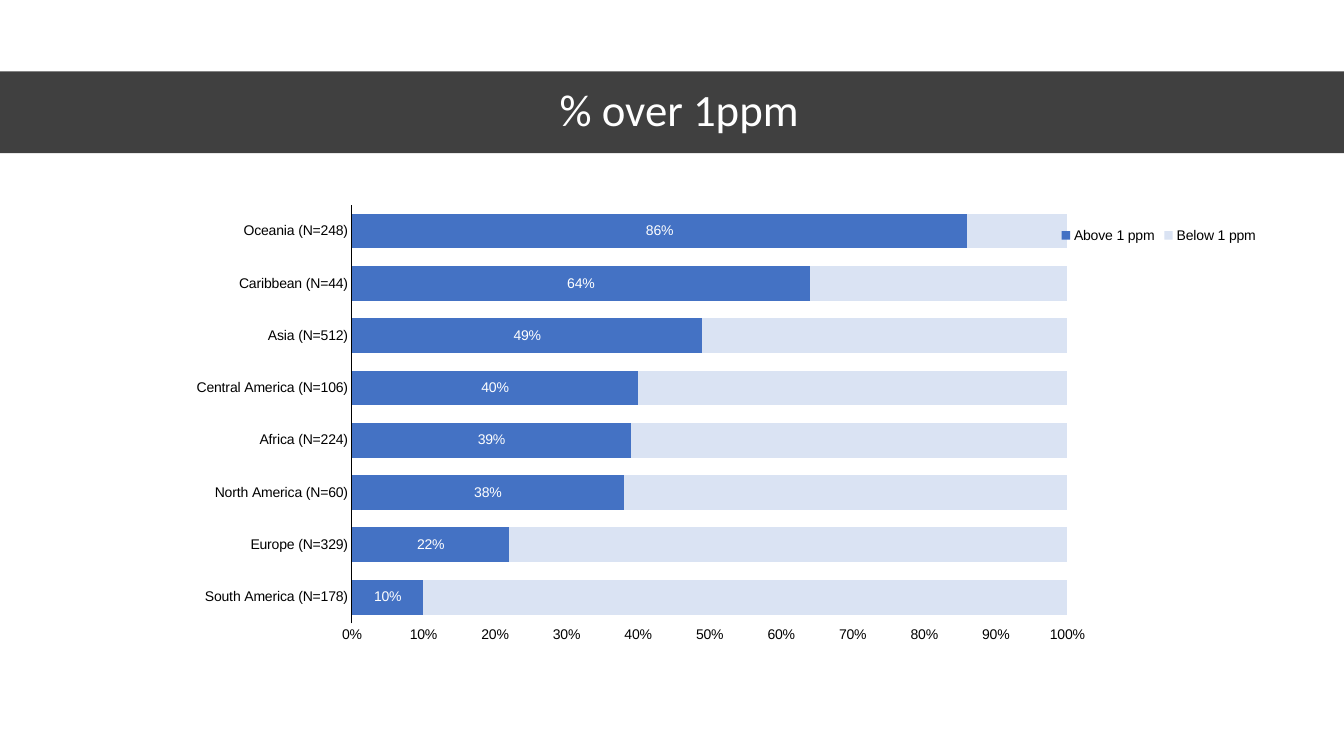
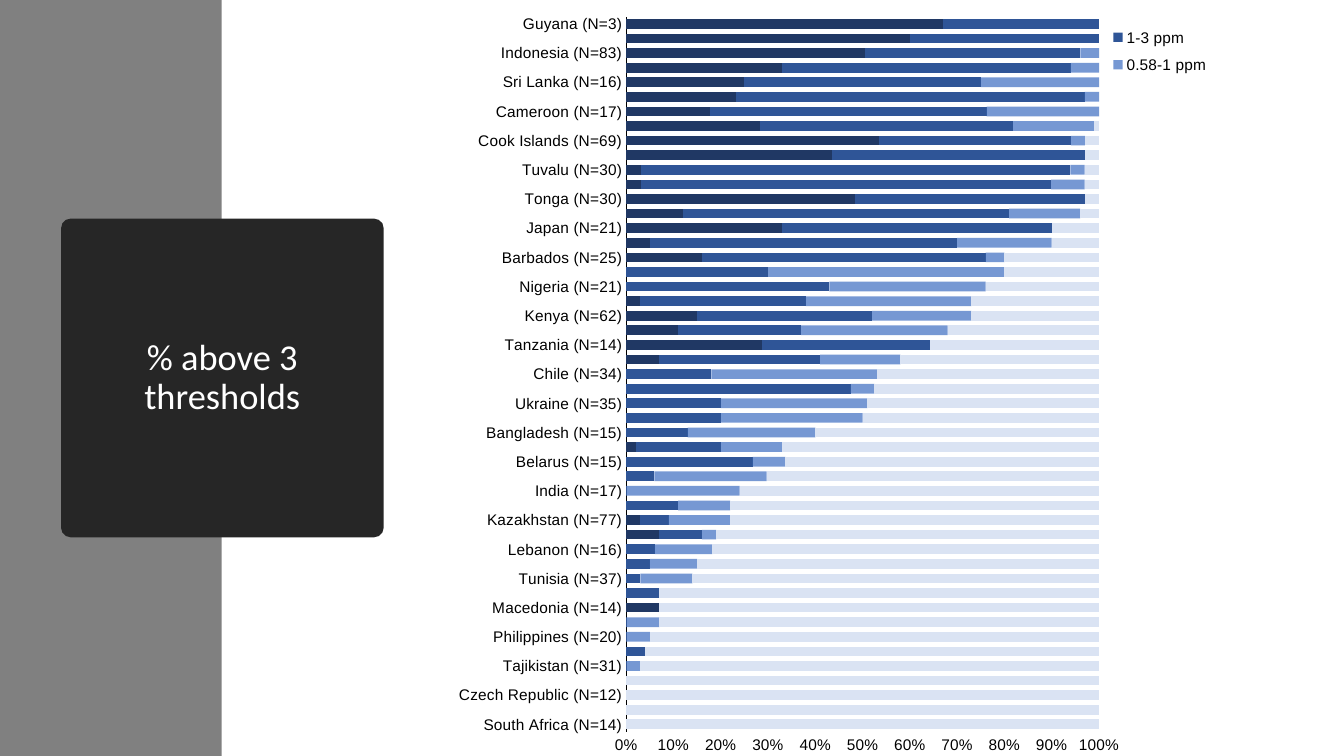
"""Builds two slides with stacked bar charts of mercury-style threshold shares by region and country."""
from pptx import Presentation
from pptx.chart.data import CategoryChartData
from pptx.dml.color import RGBColor
from pptx.enum.chart import XL_CHART_TYPE as CT, XL_LABEL_POSITION as LP
from pptx.enum.chart import XL_LEGEND_POSITION as LEG, XL_TICK_MARK as TICK
from pptx.enum.shapes import MSO_SHAPE as SHAPE
from pptx.enum.text import MSO_ANCHOR as ANCHOR, PP_ALIGN as ALIGN
from pptx.oxml import parse_xml
from pptx.oxml.ns import nsdecls, qn
from pptx.util import Cm, Pt

WHITE, BLACK, PALE, BLUE = "FFFFFF", "000000", "DAE3F3", "4472C4"
BODY, HEAD = "Arial", "Calibri"


def paint(fill, color, alpha=None):
    fill.solid()
    fill.fore_color.rgb = RGBColor.from_string(color)
    if alpha is not None:
        clr = fill._xPr.find(".//" + qn("a:srgbClr"))
        clr.append(parse_xml(f'<a:alpha {nsdecls("a")} val="{alpha * 1000}"/>'))


def write(sp, text, size=32, color=WHITE, font=HEAD, margin=0.25):
    tf = sp.text_frame
    tf.word_wrap = True
    tf.vertical_anchor = ANCHOR.MIDDLE
    tf.margin_left = tf.margin_right = Cm(margin)
    p = tf.paragraphs[0]
    p.alignment, p.line_spacing = ALIGN.CENTER, 0.9
    r = p.add_run()
    r.text = text
    r.font.size, r.font.name = Pt(size), font
    paint(r.font.fill, color)


prs = Presentation()
prs.slide_width, prs.slide_height = Cm(33.87), Cm(19.05)
regions, countries = [prs.slides.add_slide(prs.slide_layouts[6]) for _ in range(2)]

panels = []
for s, kind, box, color, alpha in (
    (regions, SHAPE.RECTANGLE, (0, 1.8, 33.87, 2.06), BLACK, 75),
    (countries, SHAPE.RECTANGLE, (0, 0, 5.59, 19.05), "808080", None),
    (countries, SHAPE.ROUNDED_RECTANGLE, (1.54, 5.51, 8.13, 8.03), "262626", None),
):
    sp = s.shapes.add_shape(kind, *map(Cm, box))
    sp.shadow.inherit = False
    paint(sp.fill, color, alpha)
    sp.line.fill.background()
    panels.append(sp)

title = regions.shapes.add_textbox(Cm(1.55), Cm(1.78), Cm(31.14), Cm(2.06))
write(title, "% over 1ppm")
panels[2].adjustments[0] = 0.03
write(panels[2], "% above 3 thresholds", size=26, margin=1)

region_names = [
    "South America (N=178)", "Europe (N=329)", "North America (N=60)", "Africa (N=224)",
    "Central America (N=106)", "Asia (N=512)", "Caribbean (N=44)", "Oceania (N=248)",
]
region_series = [
    ("Above 1 ppm", BLUE, None, [0.1, 0.22, 0.38, 0.39, 0.4, 0.49, 0.64, 0.86]),
    ("Below 1 ppm", PALE, None, [0.9, 0.78, 0.62, 0.61, 0.6, 0.51, 0.36, 0.14]),
]
country_names = [
    "South Africa (N=14)", "Armenia (N=19)", "Czech Republic (N=12)", "Hungary (N=35)",
    "Tajikistan (N=31)", "Egypt (N=23)", "Philippines (N=20)", "Moldova (N=15)",
    "Macedonia (N=14)", "Uruguay (N=55)", "Tunisia (N=37)", "Paraguay (N=86)",
    "Lebanon (N=16)", "Russia (N=122)", "Kazakhstan (N=77)", "Uganda (N=9)",
    "India (N=17)", "Belize (N=17)", "Belarus (N=15)", "Albania (N=45)",
    "Bangladesh (N=15)", "Vanuatu (N=30)", "Ukraine (N=35)", "Grenada (N=19)",
    "Chile (N=34)", "Mexico (N=59)", "Tanzania (N=14)", "Nepal (N=81)",
    "Kenya (N=62)", "United States (N=60)", "Nigeria (N=21)", "Nicaragua (N=10)",
    "Barbados (N=25)", "Costa Rica (N=20)", "Japan (N=21)", "Côte d'Ivoire (N=27)",
    "Tonga (N=30)", "Solomon Islands (N=29)", "Tuvalu (N=30)", "Marshall Islands (N=30)",
    "Cook Islands (N=69)", "Thailand (N=86)", "Cameroon (N=17)", "Myanmar (N=30)",
    "Sri Lanka (N=16)", "Italy (N=36)", "Indonesia (N=83)", "Kiribati (N=30)",
    "Guyana (N=3)",
]
country_series = [
    ("Above 3 ppm", "203864", None, [
        0, 0, 0, 0, 0, 0, 0, 0, 7, 0, 0, 0, 0, 7, 3, 0, 0, 0, 0, 2, 0, 0, 0, 0, 0,
        7, 29, 11, 15, 3, 0, 0, 16, 5, 33, 12, 48, 3, 3, 43, 54, 28, 18, 23, 25, 33,
        51, 60, 67]),
    ("1-3 ppm", "2F5597", None, [
        0, 0, 0, 0, 0, 4, 0, 0, 0, 7, 3, 5, 6, 9, 6, 11, 0, 6, 27, 18, 13, 20, 20, 47,
        18, 34, 36, 26, 37, 35, 43, 30, 60, 65, 57, 69, 48, 86, 90, 53, 41, 53, 59, 73,
        50, 61, 46, 40, 33]),
    ("0.58-1 ppm", BLUE, 73, [
        0, 0, 0, 0, 3, 0, 5, 7, 0, 0, 11, 10, 12, 3, 13, 11, 24, 24, 7, 13, 27, 30, 31,
        5, 35, 17, 0, 31, 21, 35, 33, 50, 4, 20, 0, 15, 0, 7, 3, 0, 3, 17, 24, 3, 25, 6,
        4, 0, 0]),
    ("Below 0.58 ppm", PALE, None, [
        100, 100, 100, 100, 97, 96, 95, 93, 93, 93, 86, 85, 81, 81, 78, 78, 76, 71, 67,
        67, 60, 50, 49, 47, 47, 42, 36, 32, 27, 27, 24, 20, 20, 10, 10, 4, 3, 3, 3, 3, 3,
        1, 0, 0, 0, 0, 0, 0, 0]),
]

charts = []
for s, box, size, names, series, plot_box, legend_box in (
    (regions, (1.78, 4.65, 30.3, 12.22), 10, region_names, region_series,
     (0.234, 0.042, 0.595, 0.863), (0.82, 0.07, 0.17, 0.07)),
    (countries, (11.23, 0, 19.96, 19.05), 11, country_names, country_series,
     (0.228, 0.022, 0.597, 0.946), (0.827, 0.025, 0.15, 0.085)),
):
    data = CategoryChartData(number_format="0%" if s is regions else "General")
    data.categories = names
    for name, _, _, values in series:
        data.add_series(name, values)
    chart = s.shapes.add_chart(CT.BAR_STACKED_100, *map(Cm, box), data).chart
    charts.append(chart)
    chart.has_title = False
    chart.font.size, chart.font.name = Pt(size), BODY
    paint(chart.font.fill, BLACK)

    plot = chart.plots[0]
    plot.gap_width, plot.overlap, plot.vary_by_categories = 50, 100, False
    for ser, (_, color, alpha, _) in zip(plot.series, series):
        paint(ser.format.fill, color, alpha)

    cat, val = chart.category_axis, chart.value_axis
    for axis in (cat, val):
        axis.major_tick_mark = axis.minor_tick_mark = TICK.NONE
        axis.has_major_gridlines = False
    paint(cat.format.line.fill, BLACK)
    cat.format.line.width = Pt(0.75)
    val.format.line.fill.background()
    val.minimum_scale, val.maximum_scale, val.major_unit = 0, 1, 0.1
    val.tick_labels.number_format = "0%"
    val.tick_labels.number_format_is_linked = False

    chart.has_legend = True
    chart.legend.position = LEG.RIGHT
    chart.legend.include_in_layout = False
    plot_area = chart._chartSpace.find(".//" + qn("c:plotArea"))
    for parent, index, target, frame in (
        (plot_area, 0, '<c:layoutTarget val="inner"/>', plot_box),
        (chart.legend._element, 1, "", legend_box),
    ):
        for old in parent.findall(qn("c:layout")):
            parent.remove(old)
        modes = '<c:xMode val="edge"/><c:yMode val="edge"/>'
        sides = "".join(f'<c:{k} val="{v}"/>' for k, v in zip("xywh", frame))
        parent.insert(index, parse_xml(
            f'<c:layout {nsdecls("c")}><c:manualLayout>{target}{modes}{sides}'
            "</c:manualLayout></c:layout>"))

labels = charts[0].plots[0].series[0].data_labels
labels.show_value, labels.position = True, LP.CENTER
labels.number_format, labels.number_format_is_linked = "0%", False
labels.font.size, labels.font.name = Pt(10), BODY
paint(labels.font.fill, WHITE)

charts[1].legend._element.insert(1, parse_xml(
    f'<c:legendEntry {nsdecls("c")}><c:idx val="3"/><c:delete val="1"/></c:legendEntry>'))

prs.save("out.pptx")
